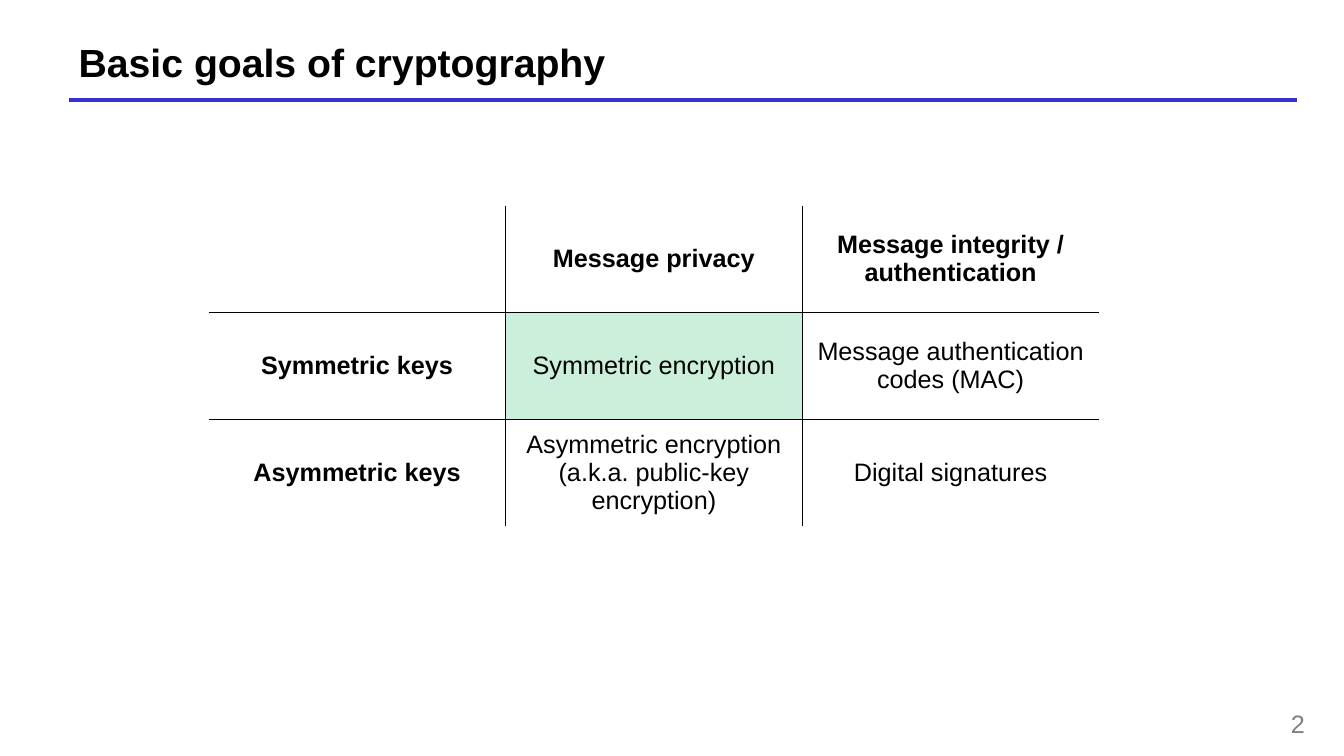
from pptx import Presentation
from pptx.dml.color import RGBColor
from pptx.enum import shapes, text
from pptx.oxml import parse_xml
from pptx.oxml.ns import nsdecls
from pptx.util import Inches, Pt

COLORS = {"text": "000000", "rule": "3333CC", "number": "808080",
          "grid": "000000", "plain": "FFFFFF", "highlight": "CCEFDC"}
FONT = "Arial"
GOALS = [
    ["", "Message privacy", "Message integrity / authentication"],
    ["Symmetric keys", "Symmetric encryption", "Message authentication codes (MAC)"],
    ["Asymmetric keys", "Asymmetric encryption (a.k.a. public-key encryption)",
     "Digital signatures"],
]
HIGHLIGHTED = (1, 1)


def color(name):
    return RGBColor.from_string(COLORS[name])


def write(frame, words, size, align, bold=False, ink="text"):
    frame.text = words
    para = frame.paragraphs[0]
    para.alignment = align
    for span in para.runs:
        span.font.name = FONT
        span.font.size = Pt(size)
        span.font.bold = bold
        span.font.color.rgb = color(ink)


def add_title(page, words):
    title = page.shapes.title
    title.left, title.top = Inches(0.68), Inches(0.36)
    title.width, title.height = Inches(12.18), Inches(0.5)
    frame = title.text_frame
    frame.auto_size = text.MSO_AUTO_SIZE.NONE
    frame.vertical_anchor = text.MSO_ANCHOR.MIDDLE
    write(frame, words, 28, text.PP_ALIGN.LEFT, bold=True)


def add_rule(page):
    rule = page.shapes.add_connector(shapes.MSO_CONNECTOR.STRAIGHT, Inches(0.68),
                                     Inches(0.99), Inches(12.86), Inches(0.99))
    rule.line.color.rgb = color("rule")
    rule.line.width = Pt(3)
    rule._element.spPr.append(parse_xml(f"<a:effectLst {nsdecls('a')}/>"))


def add_page_number(page, number):
    box = page.shapes.add_textbox(Inches(10.26), Inches(6.98), Inches(2.78), Inches(0.36))
    box.text_frame.word_wrap = True
    write(box.text_frame, number, 18, text.PP_ALIGN.RIGHT, ink="number")


def set_borders(cell, visible):
    """Draw the sides of the cell marked in visible and clear the others."""
    properties = cell._tc.get_or_add_tcPr()
    for side in "LRTB":
        fill = "<a:noFill/>"
        if visible[side]:
            fill = f'<a:solidFill><a:srgbClr val="{COLORS["grid"]}"/></a:solidFill>'
        properties.append(parse_xml(
            f'<a:ln{side} {nsdecls("a")} w="{Pt(1)}">{fill}</a:ln{side}>'))


def add_goals_table(page):
    last_row, last_column = len(GOALS) - 1, len(GOALS[0]) - 1
    table = page.shapes.add_table(last_row + 1, last_column + 1, Inches(2.07),
                                  Inches(2.04), Inches(8.83), Inches(3.18)).table
    table.first_row = table.horz_banding = False
    for r, row in enumerate(GOALS):
        for c, words in enumerate(row):
            cell = table.cell(r, c)
            set_borders(cell, {"L": c > 0, "R": c < last_column,
                               "T": r > 0, "B": r < last_row})
            cell.fill.solid()
            cell.fill.fore_color.rgb = color(
                "highlight" if (r, c) == HIGHLIGHTED else "plain")
            cell.vertical_anchor = text.MSO_ANCHOR.MIDDLE
            write(cell.text_frame, words, 18, text.PP_ALIGN.CENTER,
                  bold=r == 0 or c == 0)


def main():
    deck = Presentation()
    deck.slide_width, deck.slide_height = Inches(13.33), Inches(7.5)
    page = deck.slides.add_slide(deck.slide_layouts.get_by_name("Title Only"))
    add_rule(page)
    add_title(page, "Basic goals of cryptography")
    add_page_number(page, "2")
    add_goals_table(page)
    deck.save("out.pptx")


if __name__ == "__main__":
    main()
